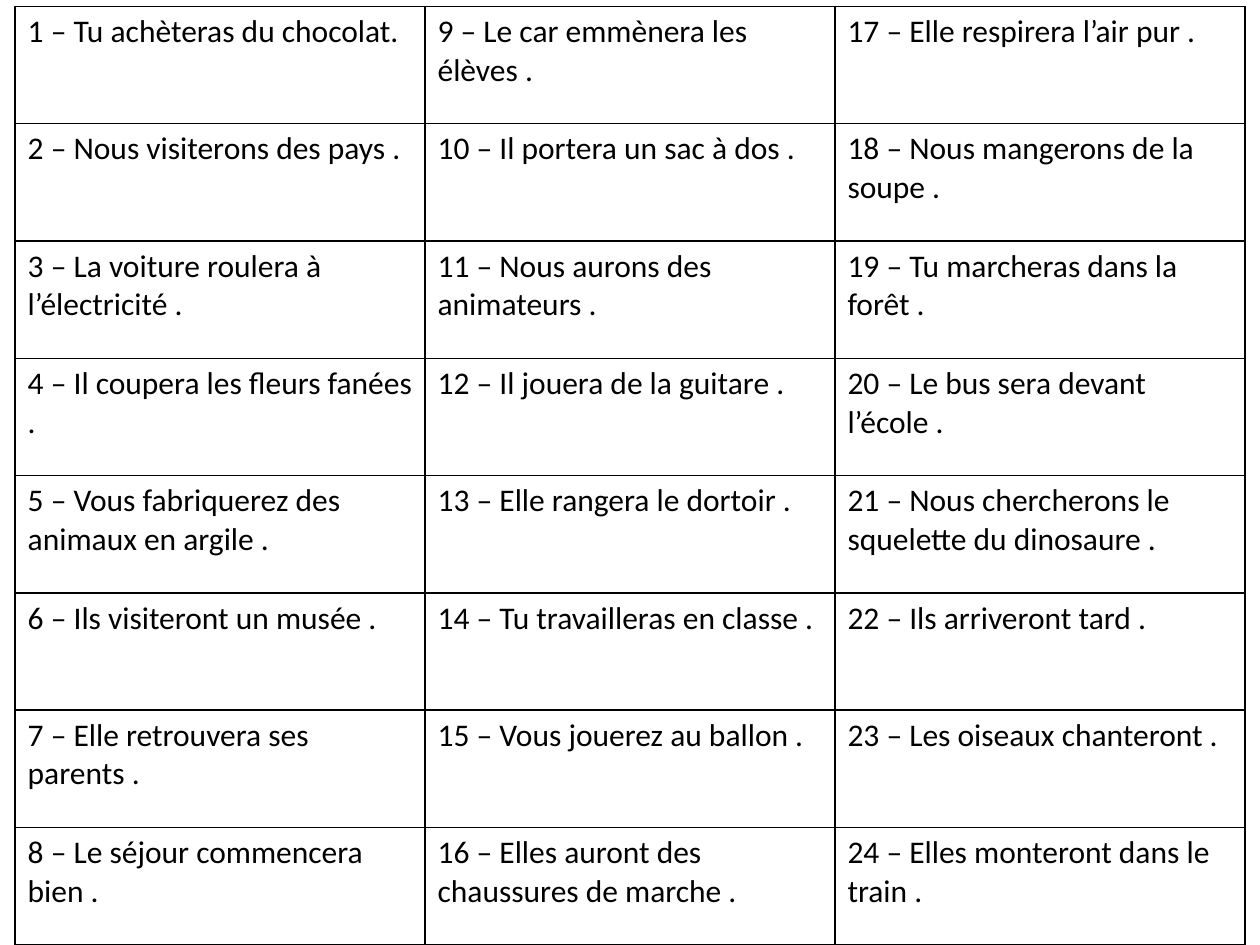
from dataclasses import dataclass

import lxml.etree
import pptx
import pptx.dml.color
import pptx.oxml.ns
import pptx.util

COLORS = {"ink": "000000", "paper": "FFFFFF"}
FONT = "Calibri"
SLIDE_WIDTH = pptx.util.Inches(10)
SLIDE_HEIGHT = pptx.util.Inches(7.5)
COLUMNS, ROWS = 3, 8
BORDER = pptx.util.Pt(1)

SENTENCES = [
    "Tu achèteras du chocolat.",
    "Nous visiterons des pays .",
    "La voiture roulera à l’électricité .",
    "Il coupera les fleurs fanées .",
    "Vous fabriquerez des animaux en argile .",
    "Ils visiteront un musée .",
    "Elle retrouvera ses parents .",
    "Le séjour commencera bien .",
    "Le car emmènera les élèves .",
    "Il portera un sac à dos .",
    "Nous aurons des animateurs .",
    "Il jouera de la guitare .",
    "Elle rangera le dortoir .",
    "Tu travailleras en classe .",
    "Vous jouerez au ballon .",
    "Elles auront des chaussures de marche .",
    "Elle respirera l’air pur .",
    "Nous mangerons de la soupe .",
    "Tu marcheras dans la forêt .",
    "Le bus sera devant l’école .",
    "Nous chercherons le squelette du dinosaure .",
    "Ils arriveront tard .",
    "Les oiseaux chanteront .",
    "Elles monteront dans le train .",
]


@dataclass(frozen=True)
class Exercise:
    number: int
    sentence: str

    @property
    def column(self) -> int:
        return (self.number - 1) // ROWS

    @property
    def row(self) -> int:
        return (self.number - 1) % ROWS

    @property
    def label(self) -> str:
        return f"{self.number} – {self.sentence}"


def draw_borders(cell) -> None:
    qn = pptx.oxml.ns.qn
    properties = cell._tc.get_or_add_tcPr()
    for position, side in enumerate(("lnL", "lnR", "lnT", "lnB")):
        edge = lxml.etree.Element(qn(f"a:{side}"), w=str(BORDER))
        ink = lxml.etree.SubElement(edge, qn("a:solidFill"))
        lxml.etree.SubElement(ink, qn("a:srgbClr"), val=COLORS["ink"])
        properties.insert(position, edge)


def write_exercise(grid, exercise: Exercise) -> None:
    cell = grid.cell(exercise.row, exercise.column)
    cell.text = exercise.label
    font = cell.text_frame.paragraphs[0].font
    font.name = FONT
    font.size = pptx.util.Pt(18)
    font.color.rgb = pptx.dml.color.RGBColor.from_string(COLORS["ink"])
    cell.fill.solid()
    cell.fill.fore_color.rgb = pptx.dml.color.RGBColor.from_string(COLORS["paper"])
    draw_borders(cell)


def main() -> None:
    deck = pptx.Presentation()
    deck.slide_width, deck.slide_height = SLIDE_WIDTH, SLIDE_HEIGHT
    slide = deck.slides.add_slide(deck.slide_layouts[6])
    width = int(SLIDE_WIDTH * 0.976)
    top = pptx.util.Inches(0.05)
    grid = slide.shapes.add_table(
        ROWS, COLUMNS, (SLIDE_WIDTH - width) // 2, top, width, SLIDE_HEIGHT - top
    ).table
    grid.first_row = grid.horz_banding = False
    for number, sentence in enumerate(SENTENCES, start=1):
        write_exercise(grid, Exercise(number, sentence))
    deck.save("out.pptx")


if __name__ == "__main__":
    main()
